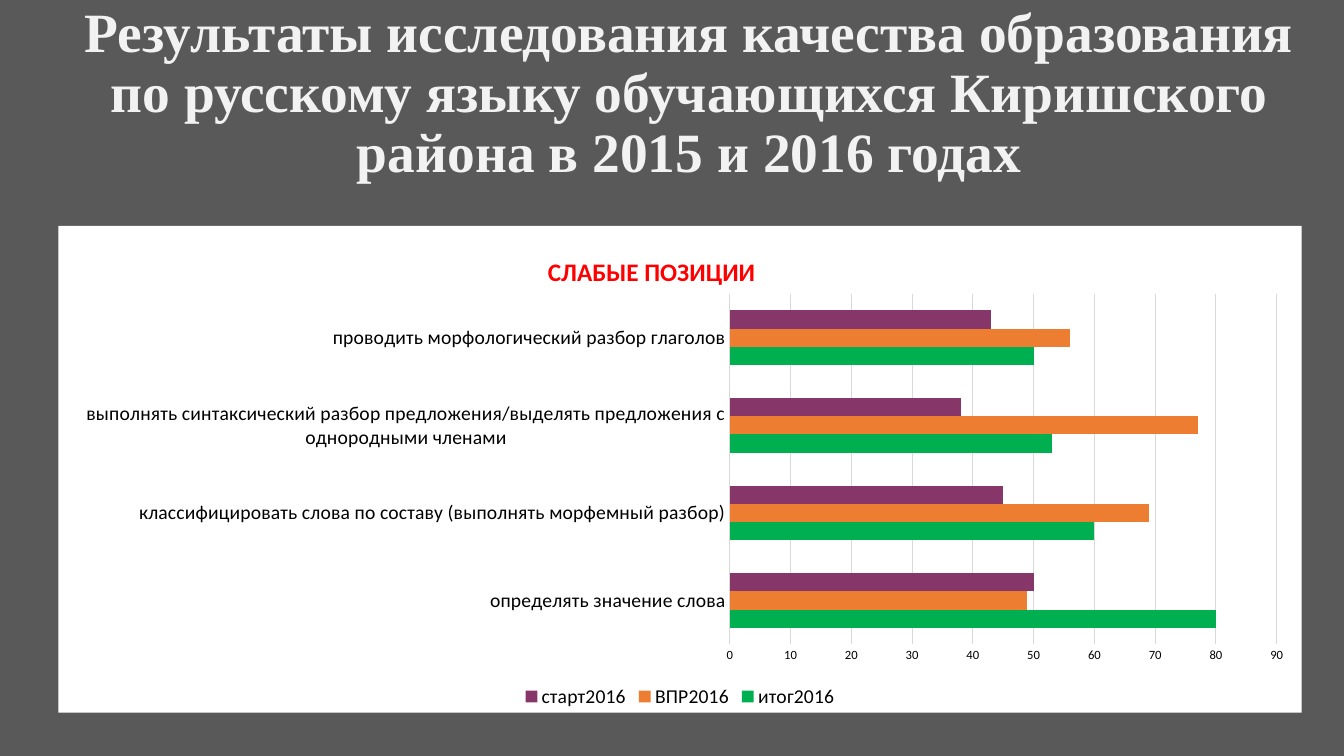
"""Build a slide with a title and a clustered bar chart of weak positions in Russian."""
from lxml import etree
from pptx import Presentation
from pptx.chart.data import CategoryChartData
from pptx.dml.color import RGBColor
from pptx.enum.chart import XL_CHART_TYPE, XL_LEGEND_POSITION, XL_TICK_MARK
from pptx.enum.text import MSO_ANCHOR, PP_ALIGN
from pptx.oxml import parse_xml
from pptx.oxml.ns import nsdecls, qn
from pptx.util import Inches, Pt

BACKGROUND = RGBColor(0x59, 0x59, 0x59)
TITLE = RGBColor(0xF2, 0xF2, 0xF2)
BLACK = RGBColor(0x00, 0x00, 0x00)
RED = RGBColor(0xFF, 0x00, 0x00)
GRID = RGBColor(0xD9, 0xD9, 0xD9)
GREEN = RGBColor(0x00, 0xB0, 0x50)
ORANGE = RGBColor(0xED, 0x7D, 0x31)
PURPLE = RGBColor(0x86, 0x36, 0x69)

CATEGORIES = [
    "определять значение слова",
    "классифицировать слова по составу (выполнять морфемный разбор)",
    "выполнять синтаксический разбор предложения/выделять предложения с однородными членами",
    "проводить морфологический разбор глаголов",
]
SERIES = [
    ("итог2016", (80, 60, 53, 50), GREEN),
    ("ВПР2016", (49, 69, 77, 56), ORANGE),
    ("старт2016", (50, 45, 38, 43), PURPLE),
]


def write_text(tf, text, size, color, font):
    p = tf.paragraphs[0]
    p.alignment = PP_ALIGN.CENTER
    r = p.add_run()
    r.text = text
    r.font.size = Pt(size)
    r.font.name = font
    r.font.bold = True
    r.font.color.rgb = color
    return p


def place(parent, index, **fractions):
    for old in parent.findall(qn("c:layout")):
        parent.remove(old)
    layout = etree.Element(qn("c:layout"))
    manual = etree.SubElement(layout, qn("c:manualLayout"))
    if "w" in fractions:
        etree.SubElement(manual, qn("c:layoutTarget")).set("val", "inner")
    for name in ("xMode", "yMode"):
        etree.SubElement(manual, qn(f"c:{name}")).set("val", "edge")
    for name, value in fractions.items():
        etree.SubElement(manual, qn(f"c:{name}")).set("val", str(value))
    parent.insert(index, layout)


prs = Presentation()
prs.slide_width = Inches(13.33)
prs.slide_height = Inches(7.5)
s = prs.slides.add_slide(prs.slide_layouts[6])
s.background.fill.solid()
s.background.fill.fore_color.rgb = BACKGROUND

tf = s.shapes.add_textbox(Inches(0.58), Inches(0.21), Inches(12.51), Inches(1.45)).text_frame
tf.word_wrap = True
tf.vertical_anchor = MSO_ANCHOR.MIDDLE
p = write_text(
    tf,
    "Результаты исследования качества образования по русскому языку "
    "обучающихся Киришского района в 2015 и 2016 годах",
    size=39.6, color=TITLE, font="Times New Roman",
)
p.line_spacing = 0.9

data = CategoryChartData()
data.categories = CATEGORIES
for name, values, color in SERIES:
    data.add_series(name, values)
chart = s.shapes.add_chart(
    XL_CHART_TYPE.BAR_CLUSTERED,
    Inches(0.58), Inches(2.24), Inches(12.33), Inches(4.83), data,
).chart
chart.font.size = Pt(10)
chart.font.name = "Calibri"
chart.font.color.rgb = BLACK
root = chart.element
root.find(qn("c:chart")).addnext(parse_xml(
    f'<c:spPr {nsdecls("c", "a")}><a:solidFill><a:srgbClr val="FFFFFF"/></a:solidFill>'
    "<a:ln><a:noFill/></a:ln></c:spPr>"
))

chart.has_title = True
write_text(chart.chart_title.text_frame, "СЛАБЫЕ ПОЗИЦИИ", size=18, color=RED, font="Calibri")
place(root.find(".//" + qn("c:title")), 1, x=0.39, y=0.05)
place(root.find(".//" + qn("c:plotArea")), 0, x=0.54, y=0.14, w=0.44, h=0.72)

plot = chart.plots[0]
plot.gap_width = 182
plot.overlap = 0
plot.vary_by_categories = False
for series, (name, values, color) in zip(plot.series, SERIES):
    series.format.fill.solid()
    series.format.fill.fore_color.rgb = color

for axis, size in ((chart.category_axis, 14), (chart.value_axis, 9)):
    axis.major_tick_mark = XL_TICK_MARK.NONE
    axis.minor_tick_mark = XL_TICK_MARK.NONE
    axis.tick_labels.font.size = Pt(size)
    axis.tick_labels.font.name = "Calibri"
    axis.tick_labels.font.color.rgb = BLACK
values_axis = chart.value_axis
values_axis.minimum_scale = 0
values_axis.maximum_scale = 90
values_axis.major_unit = 10
values_axis.format.line.fill.background()
for line in (chart.category_axis.format.line, values_axis.major_gridlines.format.line):
    line.color.rgb = GRID
    line.width = Pt(0.75)

chart.has_legend = True
legend = chart.legend
legend.position = XL_LEGEND_POSITION.BOTTOM
legend.include_in_layout = False
legend.font.size = Pt(14)
legend.font.name = "Calibri"
legend.font.color.rgb = BLACK

prs.save("out.pptx")
